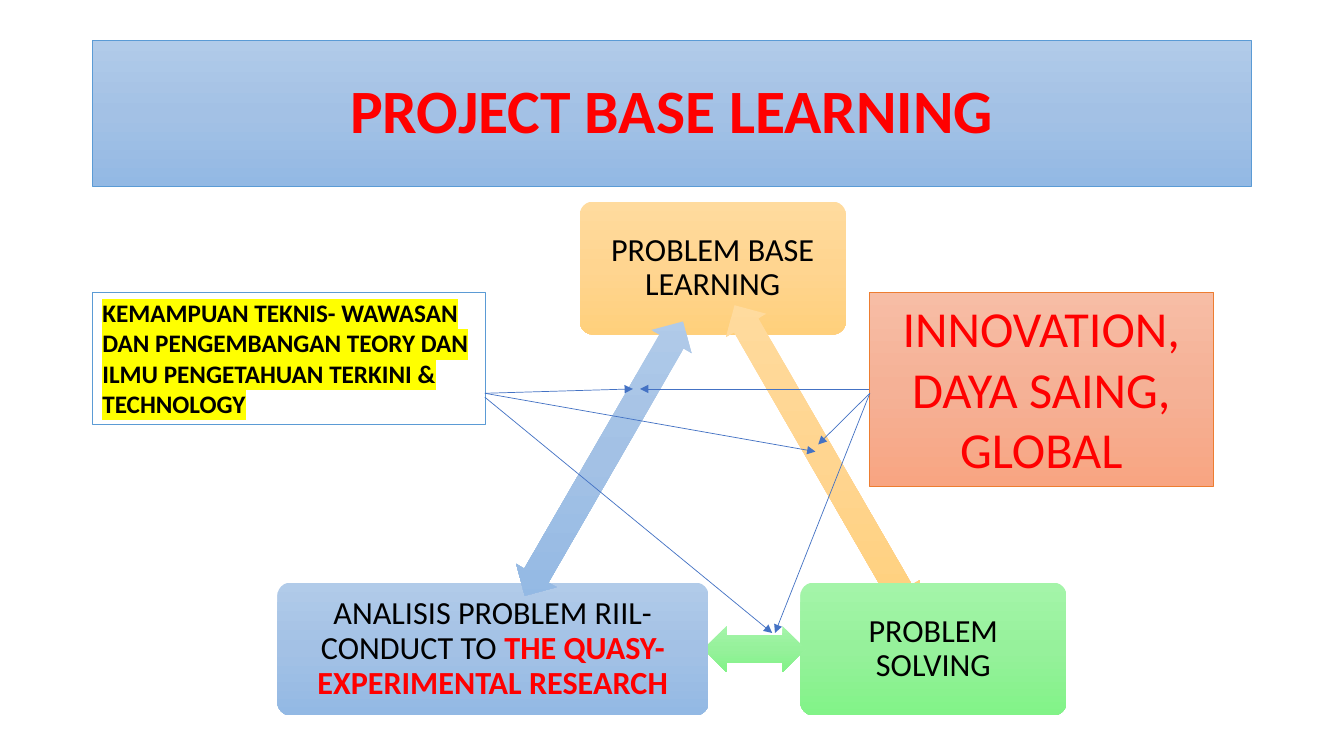
import copy
import pptx
import pptx.dml.color
import pptx.enum.dml
import pptx.enum.shapes
import pptx.enum.text
import pptx.oxml
import pptx.oxml.ns
import pptx.util

Cm, Pt = pptx.util.Cm, pptx.util.Pt
RGB = pptx.dml.color.RGBColor
Kind = pptx.enum.shapes.MSO_SHAPE
Align = pptx.enum.text.PP_ALIGN
Anchor = pptx.enum.text.MSO_ANCHOR
Auto = pptx.enum.text.MSO_AUTO_SIZE
qn = pptx.oxml.ns.qn

BLACK = RGB(0x00, 0x00, 0x00)
WHITE = RGB(0xFF, 0xFF, 0xFF)
RED = RGB(0xFF, 0x00, 0x00)
YELLOW = RGB(0xFF, 0xFF, 0x00)
EDGE = RGB(0x5B, 0x9B, 0xD5)
RUST = RGB(0xED, 0x7D, 0x31)
LINK = RGB(0x44, 0x72, 0xC4)
BLUE = (RGB(0xB1, 0xCB, 0xE9), RGB(0xA3, 0xC1, 0xE5), RGB(0x93, 0xB9, 0xE4))
GOLD = (RGB(0xFF, 0xDB, 0x9E), RGB(0xFF, 0xD5, 0x90), RGB(0xFF, 0xD0, 0x7C))
GREEN = (RGB(0xA4, 0xF4, 0xA9), RGB(0x96, 0xF1, 0x9B), RGB(0x82, 0xF3, 0x88))
CORAL = (RGB(0xF7, 0xBD, 0xA5), RGB(0xF5, 0xB1, 0x96), RGB(0xF8, 0xA5, 0x82))

TITLE = ("PROJECT BASE LEARNING", (2.33, 1.02, 29.21, 3.68))
SKILL = ("KEMAMPUAN TEKNIS- WAWASAN DAN PENGEMBANGAN TEORY DAN "
         "ILMU PENGETAHUAN TERKINI & TECHNOLOGY", (2.33, 7.37, 9.91, 3.33))
GOAL = ("INNOVATION, DAYA SAING, GLOBAL", (21.9, 7.37, 8.69, 4.88))
CYCLE = [
    ([("PROBLEM BASE LEARNING", BLACK, False)], (14.61, 5.08, 6.71), GOLD,
     (16.28, 10.97, 8.92), 60),
    ([("PROBLEM SOLVING", BLACK, False)], (20.17, 14.68, 6.71), GREEN,
     (17.73, 15.77, 2.57), 180),
    ([("ANALISIS PROBLEM RIIL- CONDUCT TO ", BLACK, False),
      ("THE QUASY-EXPERIMENTAL RESEARCH", RED, True)],
     (6.99, 14.68, 10.87), BLUE, (11.23, 10.97, 7.98), 300),
]
NODE_H, ARROW_H = 3.35, 1.17
SKILL_LINKS = [
    ((12.22, 9.91), (20.55, 11.38)),
    ((12.22, 9.91), (15.95, 9.8)),
    ((12.22, 10.01), (19.46, 15.95)),
]
GOAL_LINKS = [
    ((21.9, 9.8), (16.13, 9.8)),
    ((21.92, 9.91), (19.53, 15.95)),
    ((21.92, 9.91), (20.62, 11.2)),
]

deck = pptx.Presentation()
deck.slide_width, deck.slide_height = Cm(33.87), Cm(19.05)
slide = deck.slides.add_slide(deck.slide_layouts[6])


def shade(shape, tones):
    shape.fill.gradient()
    shape.fill.gradient_angle = 270
    grad = shape._element.spPr.find(qn("a:gradFill"))
    grad.set("rotWithShape", "0")
    first = grad.find(qn("a:gsLst"))[0]
    first.addnext(copy.deepcopy(first))
    for place, (stop, tone) in enumerate(zip(shape.fill.gradient_stops, tones)):
        stop.color.rgb = tone
        stop.position = place / 2


def block(kind, box, fill, edge=None, width=0.5):
    shape = slide.shapes.add_shape(kind, *map(Cm, box))
    shape.shadow.inherit = False
    if isinstance(fill, RGB):
        shape.fill.solid()
        shape.fill.fore_color.rgb = fill
    else:
        shade(shape, fill)
    if edge is None:
        shape.line.fill.background()
    else:
        shape.line.color.rgb = edge
        shape.line.width = Pt(width)
    return shape


def write(shape, parts, size, align=Align.CENTER, anchor=Anchor.MIDDLE, space=1.0):
    frame = shape.text_frame
    frame.word_wrap = True
    frame.vertical_anchor = anchor
    para = frame.paragraphs[0]
    para.alignment = align
    para.line_spacing = space
    for text, color, bold in parts:
        run = para.add_run()
        run.text = text
        run.font.name = "Calibri"
        run.font.size = Pt(size)
        run.font.bold = bold
        run.font.color.rgb = color


def mark(shape, color):
    for run in shape.text_frame.paragraphs[0].runs:
        glow = pptx.oxml.parse_xml(
            f'<a:highlight {pptx.oxml.ns.nsdecls("a")}><a:srgbClr val="{color}"/></a:highlight>')
        run.font._element.find(qn("a:solidFill")).addnext(glow)


def link(start, end):
    line = slide.shapes.add_connector(
        pptx.enum.shapes.MSO_CONNECTOR.STRAIGHT, *map(Cm, start + end))
    line.line.color.rgb = LINK
    line.line.width = Pt(0.5)
    props = line._element.spPr
    tip = props.find(qn("a:ln")).makeelement(qn("a:tailEnd"), {"type": "triangle"})
    props.find(qn("a:ln")).append(tip)
    props.append(props.makeelement(qn("a:effectLst"), {}))


text, box = TITLE
title = block(Kind.RECTANGLE, box, BLUE, EDGE)
write(title, [(text, RED, True)], 44, space=0.9)

for parts, spot, tones, way, turn in CYCLE:
    node = block(Kind.ROUNDED_RECTANGLE, spot + (NODE_H,), tones)
    node.adjustments[0] = 0.1
    frame = node.text_frame
    frame.margin_left = frame.margin_right = Cm(0.25)
    frame.margin_top = frame.margin_bottom = Cm(0.25)
    write(node, parts, 23, space=0.9)
    arrow = block(Kind.LEFT_RIGHT_ARROW, way + (ARROW_H,), tones)
    arrow.adjustments[0], arrow.adjustments[1] = 0.6, 0.5
    arrow.rotation = turn

text, box = SKILL
skill = block(Kind.RECTANGLE, box, WHITE, EDGE, 1)
write(skill, [(text, BLACK, True)], 18, Align.LEFT, Anchor.TOP)
skill.text_frame.auto_size = Auto.SHAPE_TO_FIT_TEXT
mark(skill, YELLOW)
for start, end in SKILL_LINKS:
    link(start, end)

text, box = GOAL
goal = block(Kind.RECTANGLE, box, CORAL, RUST)
write(goal, [(text, RED, False)], 36, anchor=Anchor.TOP)
goal.text_frame.auto_size = Auto.SHAPE_TO_FIT_TEXT
for start, end in GOAL_LINKS:
    link(start, end)

deck.save("out.pptx")
